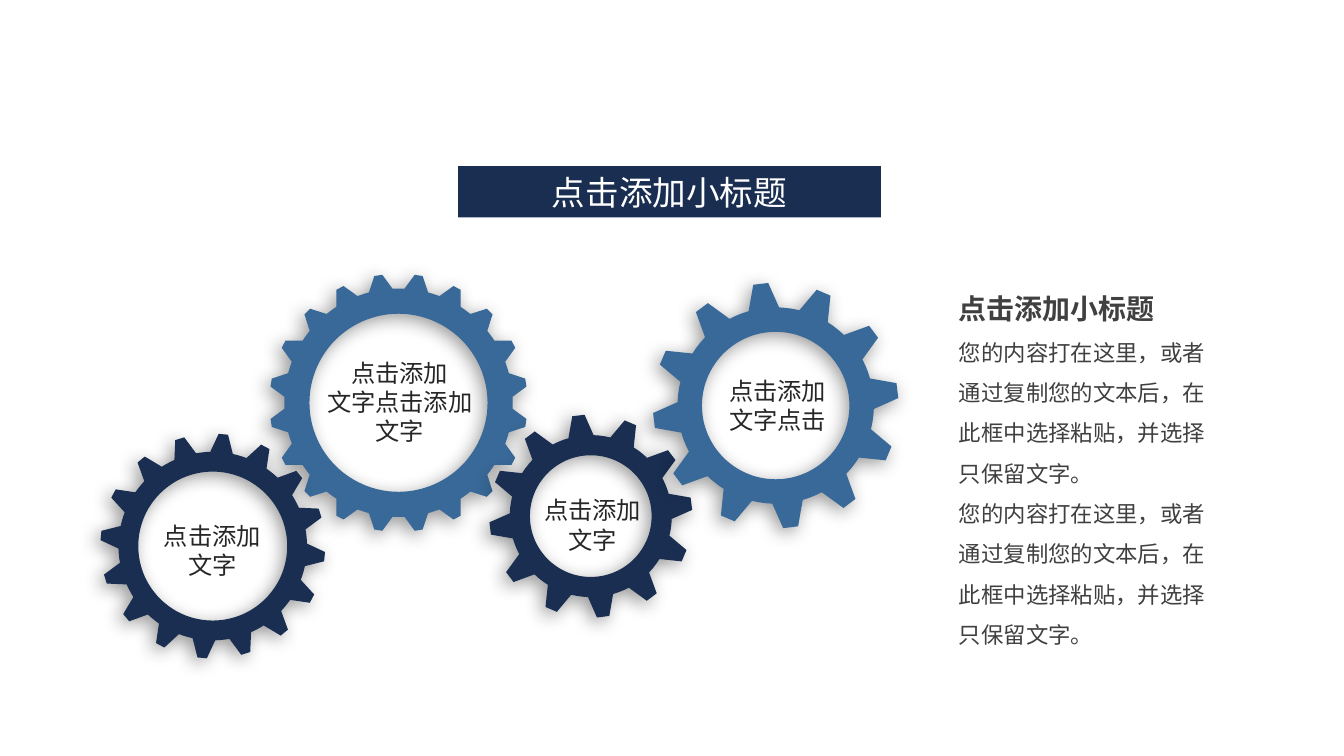
from math import cos, radians, sin
from lxml.etree import SubElement as Sub
from pptx import Presentation
from pptx.dml.color import RGBColor
from pptx.enum.text import MSO_ANCHOR as Anchor, MSO_AUTO_SIZE as Auto, PP_ALIGN as Align
from pptx.enum.shapes import MSO_SHAPE as Shape
from pptx.oxml.ns import qn
from pptx.util import Pt

FONT = "Noto Sans CJK SC"
NAVY, BLUE = "192E51", "396998"


def tint(code):
    return RGBColor.from_string(code)


def write(shape, lines, anchor, grow, **form):
    frame = shape.text_frame
    setup = {
        "word_wrap": True,
        "auto_size": Auto.SHAPE_TO_FIT_TEXT if grow else Auto.NONE,
        "vertical_anchor": anchor,
        "margin_left": Pt(5.4), "margin_right": Pt(5.4),
        "margin_top": Pt(2.7), "margin_bottom": Pt(2.7),
    }
    for key, val in setup.items():
        setattr(frame, key, val)
    for i, (text, size, bold, hue) in enumerate(lines):
        para = frame.paragraphs[0] if i == 0 else frame.add_paragraph()
        for key, val in form.items():
            setattr(para, key, val)
        run = para.add_run()
        run.text = text
        run.font.color.rgb = tint(hue)
        for key, val in {"size": Pt(size), "bold": bold, "name": FONT}.items():
            setattr(run.font, key, val)
        Sub(run.font._element, qn("a:ea"), typeface=FONT)


deck = Presentation()
deck.slide_width, deck.slide_height = Pt(720), Pt(405)
slide = deck.slides.add_slide(deck.slide_layouts[6])
shapes = slide.shapes

gears = [
    {"mid": (213.5, 215.8), "rim": 69.1, "root": 61.2, "hole": 47.7, "teeth": 20,
     "turn": 9, "tip": 1.8, "base": 6, "hue": BLUE,
     "box": (167, 187.9, 94.3, 54.7), "lines": ["点击添加", "文字点击添加", "文字"]},
    {"mid": (316.5, 276.5), "rim": 54.4, "root": 43.4, "hole": 32.6, "teeth": 12,
     "turn": -7, "tip": 3.5, "base": 9, "hue": NAVY,
     "box": (284.4, 262.1, 66.2, 38.2), "lines": ["点击添加", "文字"]},
    {"mid": (114, 292.6), "rim": 60.2, "root": 50.5, "hole": 39.9, "teeth": 16,
     "turn": 5.4, "tip": 2.4, "base": 6.9, "hue": NAVY,
     "box": (80.6, 275.8, 66.2, 38.2), "lines": ["点击添加", "文字"]},
    {"mid": (415.6, 217.3), "rim": 65.8, "root": 52.6, "hole": 39.5, "teeth": 12,
     "turn": -7, "tip": 3.5, "base": 9, "hue": BLUE,
     "box": (369.4, 198, 94.3, 38.2), "lines": ["点击添加", "文字点击"]},
]

for gear in gears:
    box = shapes.add_textbox(*map(Pt, gear["box"]))
    lines = [(text, 13, False, "262626") for text in gear["lines"]]
    write(box, lines, Anchor.MIDDLE, True, alignment=Align.CENTER)

    step = 360 / gear["teeth"]
    base, tip = gear["base"], gear["tip"]
    gap = step - 2 * base
    edge = []
    for i in range(gear["teeth"]):
        at = gear["turn"] + i * step
        edge += [(at - base, gear["root"]), (at - tip, gear["rim"]), (at + tip, gear["rim"])]
        edge += [(at + base + gap * k / 3, gear["root"]) for k in range(3)]
    ring = [(-3 * i, gear["hole"]) for i in range(120)]

    x, y = gear["mid"]
    loops = [
        [(Pt(x + r * sin(radians(a))), Pt(y - r * cos(radians(a)))) for a, r in path]
        for path in (ring, edge)
    ]
    pen = shapes.build_freeform(*loops[0][0], scale=1.0)
    pen.add_line_segments(loops[0][1:], close=True)
    pen.move_to(*loops[1][0])
    pen.add_line_segments(loops[1][1:], close=True)
    wheel = pen.convert_to_shape()
    wheel.fill.solid()
    wheel.fill.fore_color.rgb = tint(gear["hue"])
    wheel.line.fill.background()
    wheel.shadow.inherit = False
    glow = Sub(wheel._element.spPr.find(qn("a:effectLst")), qn("a:outerShdw"),
               blurRad=str(Pt(10)), dist=str(Pt(3)), dir=str(135 * 60000),
               algn="tr", rotWithShape="0")
    shade = Sub(glow, qn("a:srgbClr"), val="000000")
    Sub(shade, qn("a:alpha"), val="40000")

note = "您的内容打在这里，或者通过复制您的文本后，在此框中选择粘贴，并选择只保留文字。"
body = shapes.add_textbox(Pt(508.3), Pt(144.7), Pt(153.4), Pt(207.4))
lines = [("点击添加小标题", 15, True, "404040")] + [(note, 12, False, "404040")] * 2
write(body, lines, Anchor.TOP, True, line_spacing=1.5)

band = shapes.add_shape(Shape.RECTANGLE, Pt(245.4), Pt(89), Pt(226.6), Pt(27.4))
band.shadow.inherit = False
band.fill.solid()
band.fill.fore_color.rgb = tint(NAVY)
band.line.fill.background()
write(band, [("点击添加小标题", 18, False, "FFFFFF")], Anchor.MIDDLE, False, alignment=Align.CENTER)

deck.save("out.pptx")
